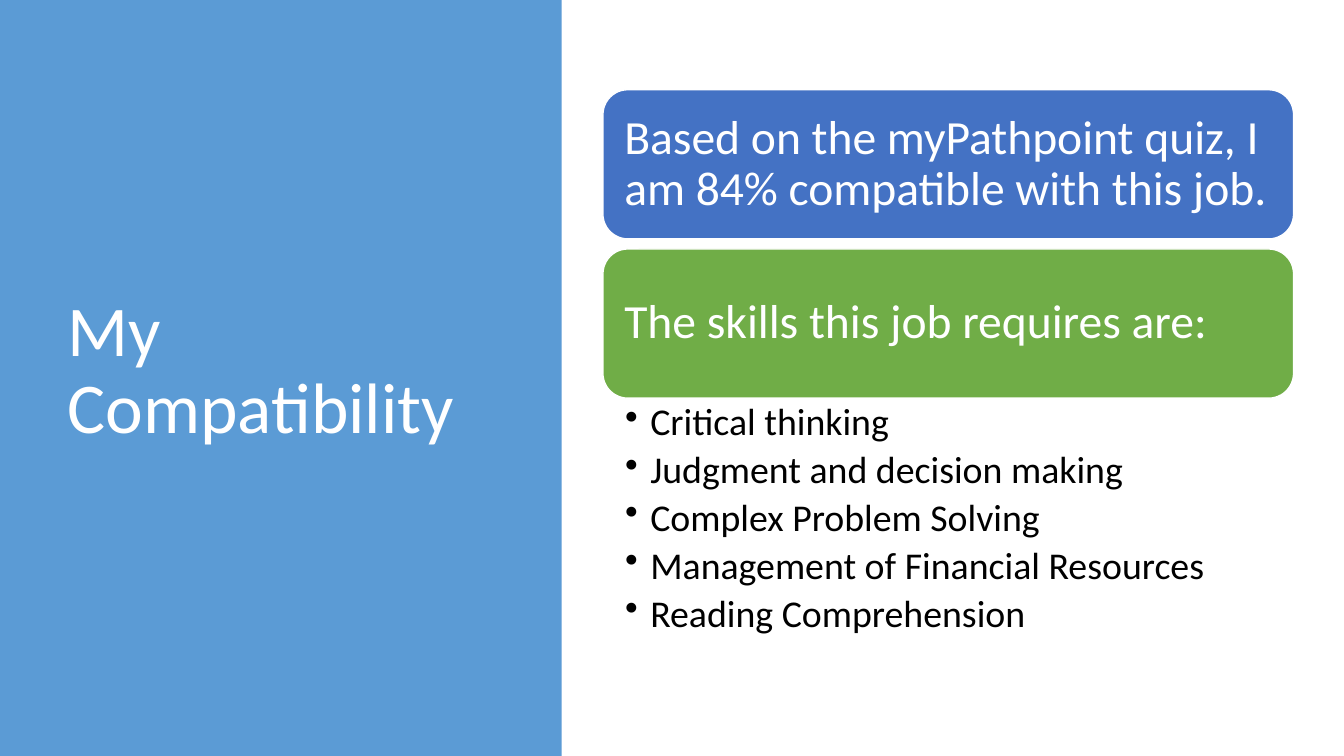
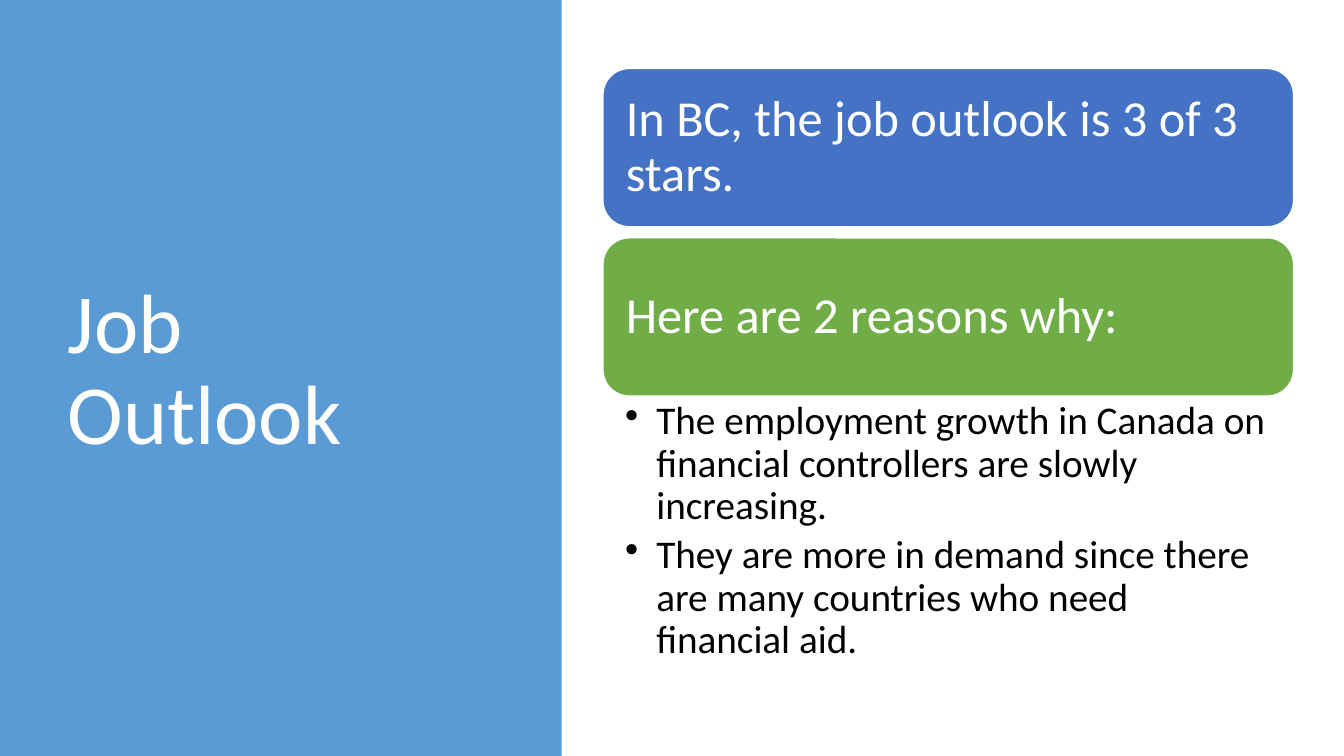
from dataclasses import dataclass

from lxml.etree import SubElement
from pptx import Presentation
from pptx.dml.color import RGBColor
from pptx.enum.shapes import MSO_SHAPE as Kind
from pptx.enum.text import MSO_ANCHOR as Anchor, MSO_AUTO_SIZE as Fit, PP_ALIGN as Align
from pptx.oxml.ns import qn
from pptx.util import Inches, Pt

FONT = "Calibri"
WHITE, BLACK, SKY = "FFFFFF", "000000", "5B9BD5"
FILLS = ("4472C4", "70AD47")
LEFT, WIDTH = 5.98, 6.85


@dataclass(frozen=True)
class Page:
    """Text and measures of one slide; lengths in inches, sizes in points."""
    title: str
    heads: tuple[str, str]
    items: tuple[str, ...]
    title_size: int
    head_size: int
    item_size: int
    top: float
    height: float
    gap: float
    pad: float
    hang: float
    right: float
    depth: float


PAGES = (
    Page("My Compatibility",
         ("Based on the myPathpoint quiz, I am 84% compatible with this job.",
          "The skills this job requires are:"),
         ("Critical thinking", "Judgment and decision making",
          "Complex Problem Solving", "Management of Financial Resources",
          "Reading Comprehension"),
         51, 34, 27, 0.89, 1.48, 0.1, 0.14, 0.25, 0.26, 2.54),
    Page("Job Outlook",
         ("In BC, the job outlook is 3 of 3 stars.", "Here are 2 reasons why:"),
         ("The employment growth in Canada on financial controllers are slowly increasing.",
          "They are more in demand since there are many countries who need financial aid."),
         60, 36, 28, 0.68, 1.57, 0.11, 0.15, 0.31, 0.28, 2.77),
)


def paint(target, color: str) -> None:
    """Give a fill a solid colour."""
    target.solid()
    target.fore_color.rgb = RGBColor.from_string(color)


def style(para, size: int, color: str) -> None:
    """Set the font, alignment and spacing of a paragraph."""
    para.font.name, para.font.size = FONT, Pt(size)
    para.font.color.rgb = RGBColor.from_string(color)
    para.alignment, para.line_spacing = Align.LEFT, 0.9


def inset(frame, left: float, top: float, right: float, bottom: float) -> None:
    """Wrap a text frame at a fixed size and set its margins."""
    frame.word_wrap, frame.auto_size = True, Fit.NONE
    frame.margin_left, frame.margin_top = Inches(left), Inches(top)
    frame.margin_right, frame.margin_bottom = Inches(right), Inches(bottom)


def block(slide, kind: Kind, x: float, y: float, w: float, h: float, color: str):
    """Add a flat filled shape."""
    shape = slide.shapes.add_shape(kind, Inches(x), Inches(y), Inches(w), Inches(h))
    shape.shadow.inherit = False
    paint(shape.fill, color)
    shape.line.fill.background()
    return shape


def panel(slide, page: Page) -> None:
    """Draw the left band and the title over it."""
    band = block(slide, Kind.RECTANGLE, 0, 0, 5.57, 7.5, SKY)
    title = slide.shapes.title
    title.element.addprevious(band.element)
    title.left, title.top = Inches(0.57), Inches(0.68)
    title.width, title.height = Inches(4.16), Inches(6.02)
    frame = title.text_frame
    frame.text = page.title
    frame.vertical_anchor = Anchor.MIDDLE
    inset(frame, 0.1, 0.05, 0.1, 0.05)
    style(frame.paragraphs[0], page.title_size, WHITE)


def card(slide, page: Page, top: float, text: str, color: str) -> None:
    """Draw one rounded heading card."""
    shape = block(slide, Kind.ROUNDED_RECTANGLE, LEFT, top, WIDTH, page.height, color)
    paint(shape.line.fill, WHITE)
    shape.line.width = Pt(1)
    frame = shape.text_frame
    frame.text = text
    frame.vertical_anchor = Anchor.MIDDLE
    inset(frame, *[page.pad] * 4)
    style(frame.paragraphs[0], page.head_size, WHITE)


def bullets(slide, page: Page, top: float) -> None:
    """Write the bulleted list under the cards."""
    box = slide.shapes.add_textbox(Inches(LEFT), Inches(top), Inches(WIDTH), Inches(page.depth))
    frame = box.text_frame
    frame.text = "\n".join(page.items)
    inset(frame, 0.22, 0.05, page.right, 0.05)
    for para in frame.paragraphs:
        style(para, page.item_size, BLACK)
        para.space_after = Pt(5)
        props = para._p.get_or_add_pPr()
        props.set("marL", str(Inches(page.hang)))
        props.set("indent", str(-Inches(page.hang)))
        mark = SubElement(props, qn("a:buChar"))
        mark.set("char", "•")
        props.find(qn("a:defRPr")).addprevious(mark)


def build(deck, page: Page) -> None:
    """Build one slide."""
    slide = deck.slides.add_slide(deck.slide_layouts[5])
    paint(slide.background.fill, WHITE)
    panel(slide, page)
    step = page.height + page.gap
    for row, (text, color) in enumerate(zip(page.heads, FILLS)):
        card(slide, page, page.top + row * step, text, color)
    bullets(slide, page, page.top + step + page.height)


def main() -> None:
    """Build and save the deck."""
    deck = Presentation()
    deck.slide_width, deck.slide_height = Inches(13.33), Inches(7.5)
    for page in PAGES:
        build(deck, page)
    deck.save("out.pptx")


if __name__ == "__main__":
    main()
